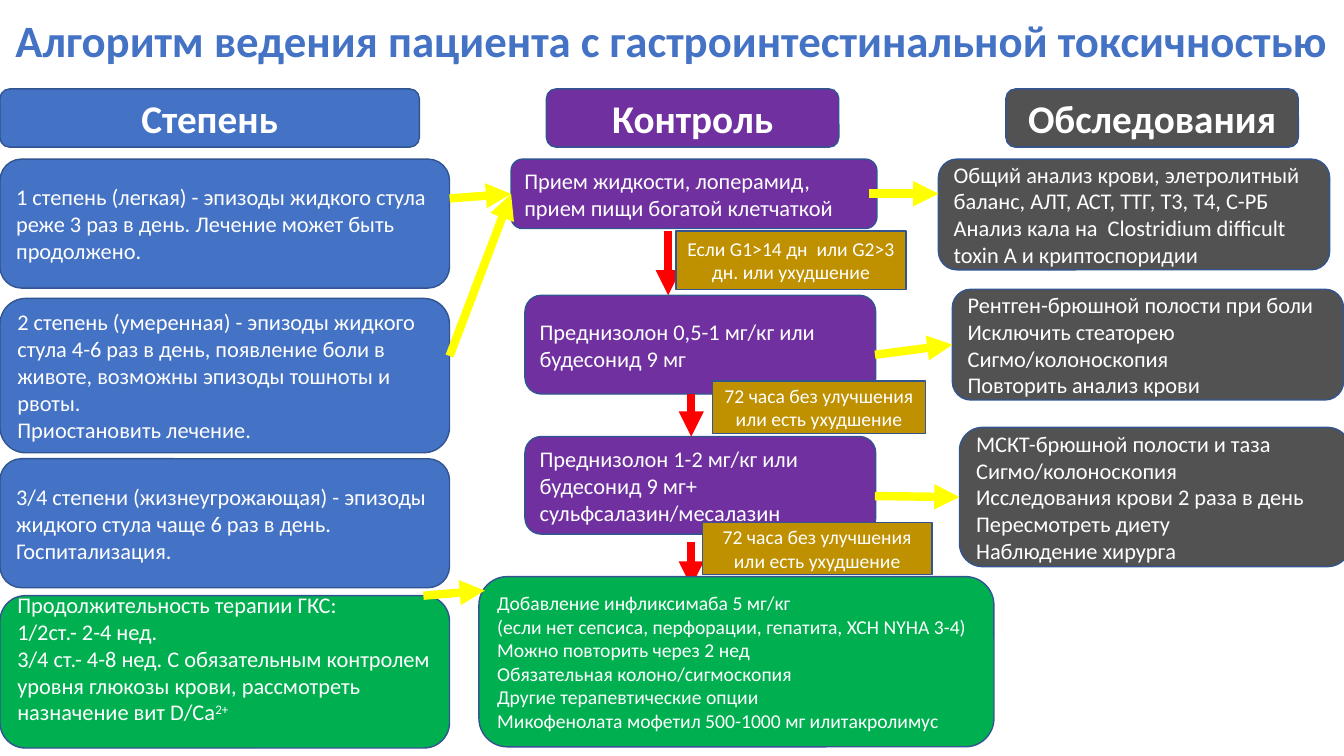
from dataclasses import dataclass

from lxml.etree import SubElement
from pptx import Presentation
from pptx.dml.color import RGBColor
from pptx.enum.shapes import MSO_CONNECTOR, MSO_SHAPE
from pptx.enum.text import MSO_ANCHOR, MSO_AUTO_SIZE, PP_ALIGN
from pptx.oxml.ns import qn
from pptx.util import Cm, Pt


@dataclass(frozen=True)
class Theme:
    """Colours, font and type sizes of the slide."""
    blue: str = "4472C4"
    purple: str = "7030A0"
    gray: str = "525252"
    green: str = "00B050"
    ochre: str = "BF9000"
    yellow: str = "FFFF00"
    red: str = "FF0000"
    white: str = "FFFFFF"
    outline: str = "325491"
    font: str = "Calibri"
    title_size: int = 32
    header_size: int = 28
    body_size: int = 16
    note_size: int = 14
    outline_width: int = 1
    arrow_width: int = 6


THEME = Theme()
NO_IMPROVEMENT = "72 часа без улучшения или есть ухудшение"

HEADERS = [
    ("Степень", 0, 10.57, THEME.blue),
    ("Контроль", 13.77, 7.37, THEME.purple),
    ("Обследования", 25.35, 7.37, THEME.gray),
]
GRADES = [
    (4.01, 3.25, ["1 степень (легкая) - эпизоды жидкого стула реже 3 раз в день. "
                  "Лечение может быть продолжено."]),
    (7.52, 3.89, ["2 степень (умеренная) - эпизоды жидкого стула 4-6 раз в день, "
                  "появление боли в животе, возможны эпизоды тошноты и рвоты.",
                  "Приостановить лечение."]),
    (11.56, 3.25, ["3/4 степени (жизнеугрожающая) - эпизоды жидкого стула чаще 6 раз "
                   "в день. Госпитализация."]),
]
DURATION = [
    "Продолжительность терапии ГКС:",
    "1/2ст.- 2-4 нед.",
    "3/4 ст.- 4-8 нед. С обязательным контролем уровня глюкозы крови, "
    "рассмотреть назначение вит D/Ca^2+",
]
CONTROLS = [
    (12.88, 4.01, 9.22, 1.75, ["Прием жидкости, лоперамид, прием пищи богатой клетчаткой"]),
    (13.23, 7.44, 8.84, 2.49, ["Преднизолон 0,5-1 мг/кг или будесонид 9 мг"]),
    (13.23, 11.0, 8.84, 2.46, ["Преднизолон 1-2 мг/кг или будесонид 9 мг+ "
                               "сульфсалазин/месалазин"]),
]
ESCALATIONS = [
    (16.84, 5.82, 7.44),
    (17.42, 9.93, 11.0),
    (17.42, 13.67, 14.78),
]
CONDITIONS = [
    (17.04, 5.82, 5.79, 1.47, ["Если G1>14 дн  или G2>3 дн. или ухудшение"]),
    (17.96, 9.6, 5.36, 1.32, [NO_IMPROVEMENT]),
    (17.7, 13.16, 5.79, 1.32, [NO_IMPROVEMENT]),
]
RESERVE_THERAPY = [
    "Добавление инфликсимаба 5 мг/кг",
    "(если нет сепсиса, перфорации, гепатита, ХСН NYHA 3-4)",
    "Можно повторить через 2 нед",
    "Обязательная колоно/сигмоскопия",
    "Другие терапевтические опции",
    "Микофенолата мофетил 500-1000 мг илитакролимус",
]
EXAMINATIONS = [
    (23.65, 4.01, 2.79, ["Общий анализ крови, элетролитный баланс, АЛТ, АСТ, ТТГ, Т3, Т4, С-РБ",
                         "Анализ кала на  Clostridium difficult toxin A и криптоспоридии"]),
    (24.0, 7.29, 2.79, ["Рентген-брюшной полости при боли", "Исключить стеаторею",
                        "Сигмо/колоноскопия", "Повторить анализ крови"]),
    (24.18, 10.77, 3.51, ["МСКТ-брюшной полости и таза", "Сигмо/колоноскопия",
                          "Исследования крови 2 раза в день", "Пересмотреть диету",
                          "Наблюдение хирурга"]),
]


def apply_format(target, values):
    """Set each named attribute of the target."""
    for name, value in values.items():
        setattr(target, name, value)


def add_run(paragraph, text, size, color, bold):
    """Append a formatted run to the paragraph."""
    run = paragraph.add_run()
    run.text = text
    apply_format(run.font, {"name": THEME.font, "size": Pt(size), "bold": bold})
    run.font.color.rgb = RGBColor.from_string(color)
    return run


def write_text(shape, lines, size, color=THEME.white, bold=False, align=PP_ALIGN.LEFT, spacing=1.0):
    """Write one paragraph per line, raising what follows a caret."""
    frame = shape.text_frame
    apply_format(frame, {"word_wrap": True, "auto_size": MSO_AUTO_SIZE.NONE,
                         "vertical_anchor": MSO_ANCHOR.MIDDLE})
    for index, line in enumerate(lines):
        paragraph = frame.add_paragraph() if index else frame.paragraphs[0]
        apply_format(paragraph, {"alignment": align, "line_spacing": spacing})
        base, _, raised = line.partition("^")
        add_run(paragraph, base, size, color, bold)
        if raised:
            superscript = add_run(paragraph, raised, size, color, bold)
            superscript._r.get_or_add_rPr().set("baseline", "30000")


def add_title(slide, text):
    """Place and format the title placeholder."""
    title = slide.shapes.title
    apply_format(title, {"left": Cm(0), "top": Cm(0), "width": Cm(33.87), "height": Cm(2.18)})
    write_text(title, [text], THEME.title_size, THEME.blue, True, PP_ALIGN.CENTER, 0.9)


def add_box(slide, bounds, lines, color, size=THEME.body_size,
            kind=MSO_SHAPE.ROUNDED_RECTANGLE, **text_format):
    """Add a filled, outlined box with text."""
    shape = slide.shapes.add_shape(kind, *map(Cm, bounds))
    shape.shadow.inherit = False
    shape.fill.solid()
    shape.fill.fore_color.rgb = RGBColor.from_string(color)
    shape.line.color.rgb = RGBColor.from_string(THEME.outline)
    shape.line.width = Pt(THEME.outline_width)
    write_text(shape, lines, size, **text_format)
    return shape


def add_arrow(slide, start, end, color, target=None):
    """Add an arrow, joined to the left side of the target if there is one."""
    connector = slide.shapes.add_connector(MSO_CONNECTOR.STRAIGHT, *map(Cm, start + end))
    if target is not None:
        connector.end_connect(target, 1)
    connector.line.color.rgb = RGBColor.from_string(color)
    connector.line.width = Pt(THEME.arrow_width)
    SubElement(connector.line._get_or_add_ln(), qn("a:tailEnd"), type="triangle")
    SubElement(connector._element.spPr, qn("a:effectLst"))


def main():
    """Build and save the slide."""
    presentation = Presentation()
    apply_format(presentation, {"slide_width": Cm(33.87), "slide_height": Cm(19.05)})
    slide = presentation.slides.add_slide(presentation.slide_layouts[5])
    add_title(slide, "Алгоритм ведения пациента с гастроинтестинальной токсичностью")

    for text, left, width, color in HEADERS:
        add_box(slide, (left, 2.24, width, 1.47), [text], color, THEME.header_size,
                bold=True, align=PP_ALIGN.CENTER)
    for top, height, lines in GRADES:
        add_box(slide, (0, top, 11.33, height), lines, THEME.blue)
    duration = add_box(slide, (0, 15.01, 11.33, 3.84), DURATION, THEME.green)
    duration.text_frame.margin_bottom = Cm(0.81)

    controls = [add_box(slide, bounds, lines, THEME.purple) for *bounds, lines in CONTROLS]
    for left, top, bottom in ESCALATIONS:
        add_arrow(slide, (left, top), (left, bottom), THEME.red)
    for *bounds, lines in CONDITIONS:
        add_box(slide, bounds, lines, THEME.ochre, THEME.note_size, MSO_SHAPE.RECTANGLE,
                align=PP_ALIGN.CENTER)
    add_box(slide, (12.07, 14.53, 12.98, 4.29), RESERVE_THERAPY, THEME.green, THEME.note_size)
    examinations = [add_box(slide, (left, top, 9.86, height), lines, THEME.gray)
                    for left, top, height, lines in EXAMINATIONS]

    for start, end, target in [
        ((11.33, 5.0), (12.88, 4.88), controls[0]),
        ((11.33, 8.97), (12.88, 4.88), controls[0]),
        ((10.67, 15.01), (12.22, 14.88), None),
        ((21.89, 4.88), (23.65, 4.88), None),
        ((22.05, 8.94), (24.0, 8.69), examinations[1]),
        ((22.05, 12.5), (24.18, 12.52), examinations[2]),
    ]:
        add_arrow(slide, start, end, THEME.yellow, target)
    presentation.save("out.pptx")


if __name__ == "__main__":
    main()
